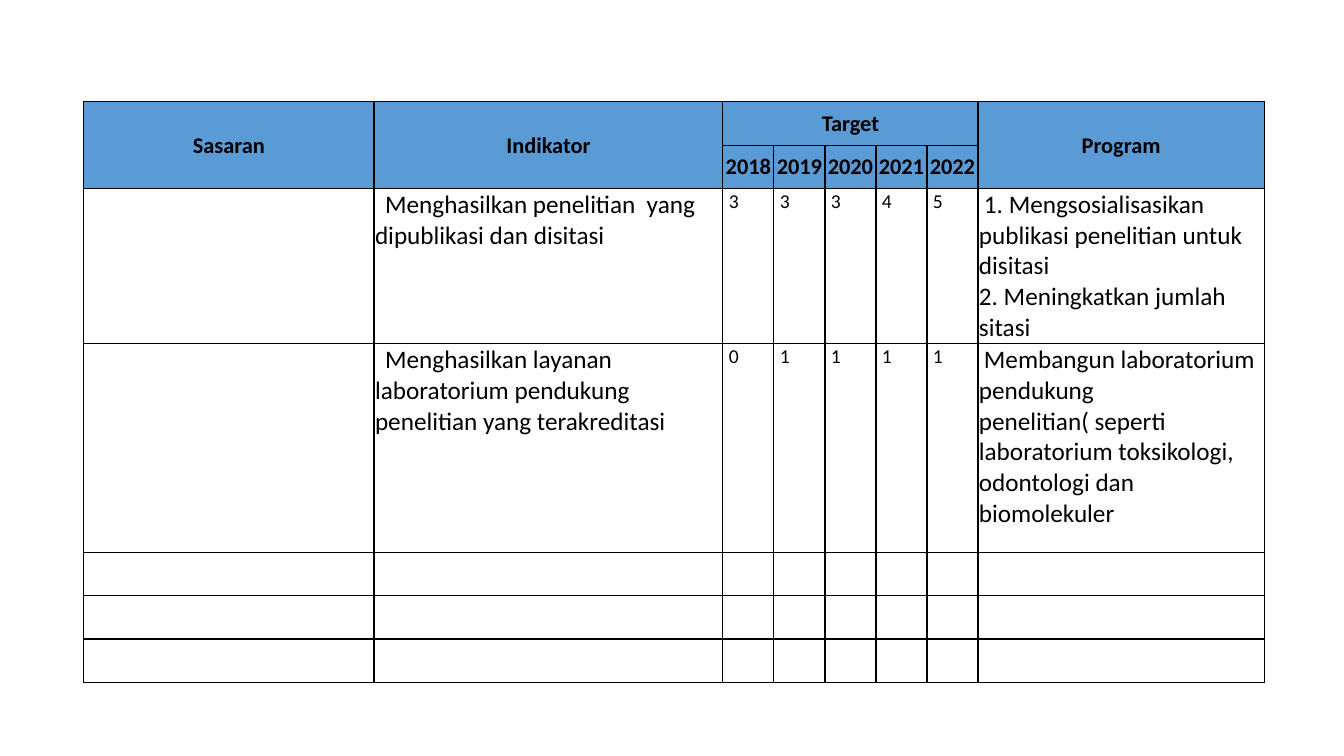
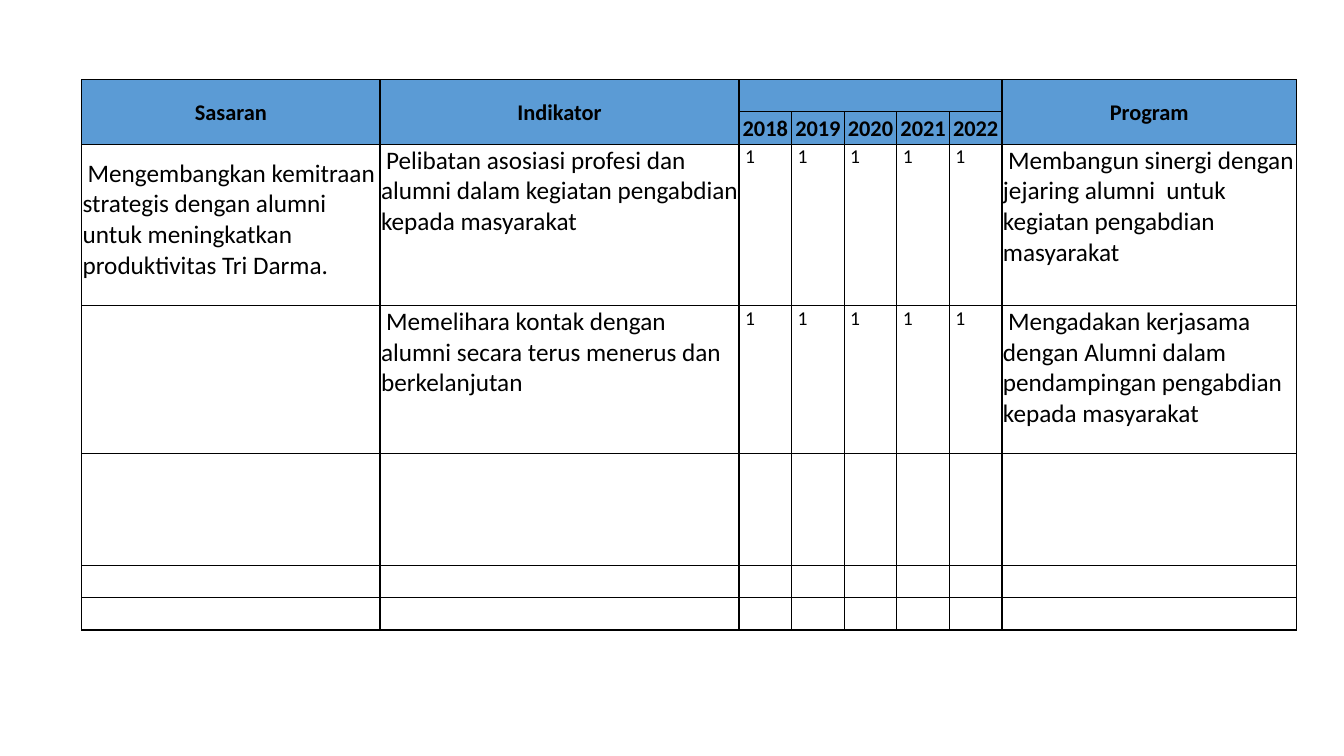
import pptx
import pptx.util
import pptx.dml.color
import pptx.enum.text
import pptx.oxml.ns
from lxml import etree

Inches, Pt = pptx.util.Inches, pptx.util.Pt
ALIGN, ANCHOR = pptx.enum.text.PP_ALIGN, pptx.enum.text.MSO_ANCHOR

# Shared look
HEADER_BLUE = pptx.dml.color.RGBColor(0x5B, 0x9B, 0xD5)
BLACK = pptx.dml.color.RGBColor(0, 0, 0)
FONT = "Calibri"
HEADER_SIZE, BODY_SIZE, TARGET_SIZE = 16, 18, 14
INDENT = 0.05
YEARS = ["2018", "2019", "2020", "2021", "2022"]
FIRST_YEAR, PROGRAM = 2, 2 + len(YEARS)
HEADER_ROWS = 2

# Content: each row holds sasaran, indikator, yearly targets, program
TABLES = [
    {
        "left": 0.83, "top": 1.01,
        "widths": {"sasaran": 2.88, "indikator": 3.46, "target": 2.53, "program": 2.84},
        "heights": [0.43, 0.43, 1.54, 2.07, 0.43, 0.43, 0.43],
        "target_heading": "Target",
        "rows": [
            ("", "Menghasilkan penelitian  yang dipublikasi dan disitasi", [3, 3, 3, 4, 5],
             "1. Mengsosialisasikan publikasi penelitian untuk disitasi\n"
             "2. Meningkatkan jumlah sitasi"),
            ("", "Menghasilkan layanan laboratorium pendukung penelitian yang terakreditasi",
             [0, 1, 1, 1, 1],
             "Membangun laboratorium pendukung penelitian( seperti laboratorium "
             "toksikologi, odontologi dan biomolekuler"),
        ],
        "indikator_indent": 2 * INDENT,
        "bottom_cells": [],
    },
    {
        "left": 0.81, "top": 0.79,
        "widths": {"sasaran": 2.96, "indikator": 3.56, "target": 2.61, "program": 2.92},
        "heights": [0.32, 0.32, 1.6, 1.47, 1.11, 0.32, 0.32],
        "target_heading": "",
        "rows": [
            ("Mengembangkan kemitraan strategis dengan alumni untuk meningkatkan "
             "produktivitas Tri Darma.",
             "Pelibatan asosiasi profesi dan alumni dalam kegiatan pengabdian kepada masyarakat",
             [1, 1, 1, 1, 1],
             "Membangun sinergi dengan jejaring alumni  untuk kegiatan pengabdian masyarakat"),
            ("", "Memelihara kontak dengan alumni secara terus menerus dan berkelanjutan",
             [1, 1, 1, 1, 1],
             "Mengadakan kerjasama dengan Alumni dalam pendampingan pengabdian kepada masyarakat"),
        ],
        "indikator_indent": INDENT,
        "bottom_cells": [(2, 0), (3, PROGRAM)],
    },
]


def add_borders(cell):
    properties = cell._tc.get_or_add_tcPr()
    for side in ("lnL", "lnR", "lnT", "lnB"):
        line = etree.SubElement(properties, pptx.oxml.ns.qn(f"a:{side}"), w=str(Pt(1)))
        fill = etree.SubElement(line, pptx.oxml.ns.qn("a:solidFill"))
        etree.SubElement(fill, pptx.oxml.ns.qn("a:srgbClr"), val=str(BLACK))


def style_cell(cell, is_header):
    add_borders(cell)
    cell.margin_left = cell.margin_top = cell.margin_right = Inches(0.01)
    cell.margin_bottom = 0
    if is_header:
        cell.fill.solid()
        cell.fill.fore_color.rgb = HEADER_BLUE
        cell.vertical_anchor = ANCHOR.MIDDLE
    else:
        cell.fill.background()


def write_cell(cell, text, size, bold=False, align=ALIGN.LEFT, indent=0.0):
    if not text:
        return
    cell.text_frame.text = text
    first = cell.text_frame.paragraphs[0]
    if indent:
        first._p.get_or_add_pPr().set("indent", str(Inches(indent)))
    for paragraph in cell.text_frame.paragraphs:
        paragraph.alignment = align
        for run in paragraph.runs:
            run.font.name, run.font.size, run.font.bold = FONT, Pt(size), bold
            run.font.color.rgb = BLACK


def write_header(table, target_heading):
    headings = {(0, 0): "Sasaran", (0, 1): "Indikator",
                (0, FIRST_YEAR): target_heading, (0, PROGRAM): "Program"}
    headings.update({(1, FIRST_YEAR + index): year for index, year in enumerate(YEARS)})
    for column in (0, 1, PROGRAM):
        table.cell(0, column).merge(table.cell(1, column))
    table.cell(0, FIRST_YEAR).merge(table.cell(0, PROGRAM - 1))
    for position, heading in headings.items():
        write_cell(table.cell(*position), heading, HEADER_SIZE, True, ALIGN.CENTER)


def add_target_table(slide, data):
    widths = data["widths"]
    year_width = widths["target"] / len(YEARS)
    columns = [widths["sasaran"], widths["indikator"],
               *[year_width] * len(YEARS), widths["program"]]
    heights = data["heights"]
    table = slide.shapes.add_table(
        len(heights), len(columns), Inches(data["left"]), Inches(data["top"]),
        Inches(sum(columns)), Inches(sum(heights))).table
    table.first_row = table.horz_banding = False
    for column, width in zip(table.columns, columns):
        column.width = Inches(width)
    for index, (row, height) in enumerate(zip(table.rows, heights)):
        row.height = Inches(height)
        for cell in row.cells:
            style_cell(cell, index < HEADER_ROWS)

    write_header(table, data["target_heading"])

    # Goals, indicators, yearly targets and programmes
    for index, (sasaran, indikator, targets, program) in enumerate(data["rows"], HEADER_ROWS):
        write_cell(table.cell(index, 0), sasaran, BODY_SIZE, indent=INDENT)
        write_cell(table.cell(index, 1), indikator, BODY_SIZE, indent=data["indikator_indent"])
        for column, target in enumerate(targets, FIRST_YEAR):
            write_cell(table.cell(index, column), str(target), TARGET_SIZE, indent=INDENT)
        write_cell(table.cell(index, PROGRAM), program, BODY_SIZE, indent=INDENT)
    for position in data["bottom_cells"]:
        cell = table.cell(*position)
        cell.vertical_anchor = ANCHOR.BOTTOM
        cell.margin_bottom = Inches(0.24)


def main():
    presentation = pptx.Presentation()
    presentation.slide_width, presentation.slide_height = Inches(13.33), Inches(7.5)
    for data in TABLES:
        slide = presentation.slides.add_slide(presentation.slide_layouts[6])
        add_target_table(slide, data)
    presentation.save("out.pptx")


if __name__ == "__main__":
    main()
